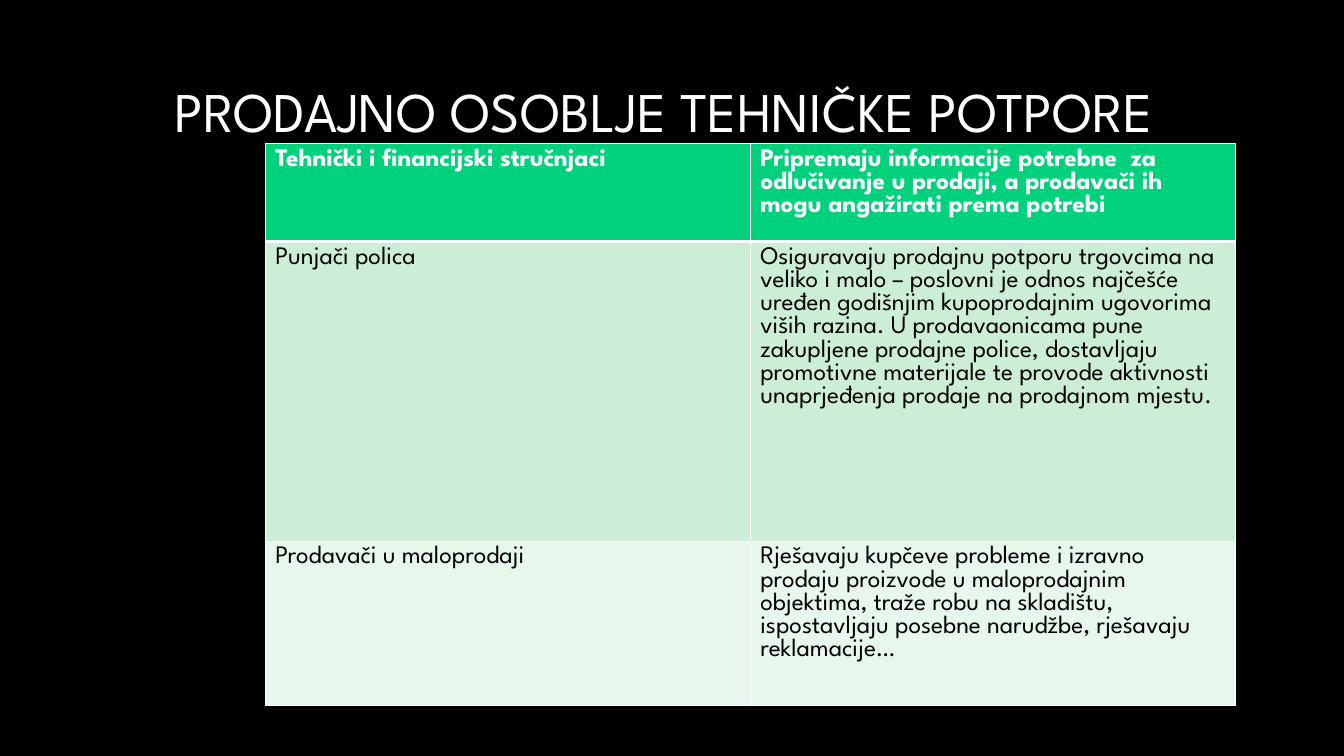
from pptx import Presentation
from pptx.dml.color import RGBColor
from pptx.enum.text import MSO_ANCHOR, PP_ALIGN
from pptx.oxml.ns import qn
from pptx.util import Pt
from lxml import etree

CENTER = PP_ALIGN.CENTER
LEFT = PP_ALIGN.LEFT
MIDDLE = MSO_ANCHOR.MIDDLE
TOP = MSO_ANCHOR.TOP

FONT = "League Spartan"
COLORS = {
    "background": "000000",
    "white": "FFFFFF",
    "text": "000000",
    "header": "01D17D",
    "band_dark": "CCEED7",
    "band_light": "E7F7EC",
}

# Each row: height, fill, cell texts
STAFF_ROWS = [
    (70, "header", (
        "Tehnički i financijski stručnjaci",
        "Pripremaju informacije potrebne  za odlučivanje u prodaji, "
        "a prodavači ih mogu angažirati prema potrebi")),
    (214, "band_dark", (
        "Punjači polica",
        "Osiguravaju prodajnu potporu trgovcima na veliko i malo – poslovni je "
        "odnos najčešće uređen godišnjim kupoprodajnim ugovorima viših razina. "
        "U prodavaonicama pune zakupljene prodajne police, dostavljaju "
        "promotivne materijale te provode aktivnosti unaprjeđenja prodaje na "
        "prodajnom mjestu.")),
    (117.5, "band_light", (
        "Prodavači u maloprodaji",
        "Rješavaju kupčeve probleme i izravno prodaju proizvode u "
        "maloprodajnim objektima, traže robu na skladištu, ispostavljaju "
        "posebne narudžbe, rješavaju reklamacije…")),
]
COLUMN_WIDTH = 346.5


def rgb(name):
    return RGBColor.from_string(COLORS[name])


def write_text(tf, text, size=18, color="text", bold=False, align=LEFT, spacing=None):
    tf.word_wrap = True
    p = tf.paragraphs[0]
    p.alignment = align
    p.line_spacing = spacing
    r = p.add_run()
    r.text = text
    r.font.name = FONT
    r.font.size = Pt(size)
    r.font.bold = bold
    r.font.color.rgb = rgb(color)


def set_borders(cell, **widths):
    """Draw white borders; widths are in points, keyed by side L, R, T, B."""
    props = cell._tc.get_or_add_tcPr()
    for i, (side, width) in enumerate(widths.items()):
        line = etree.Element(qn(f"a:ln{side}"), w=str(Pt(width)))
        fill = etree.SubElement(line, qn("a:solidFill"))
        etree.SubElement(fill, qn("a:srgbClr"), val=COLORS["white"])
        props.insert(i, line)


def add_title(s, text):
    sp = s.shapes.title
    sp.left, sp.top, sp.width, sp.height = Pt(28.8), Pt(27.4), Pt(890.6), Pt(108.7)
    sp.text_frame.vertical_anchor = MIDDLE
    write_text(sp.text_frame, text, size=40, color="white", align=CENTER, spacing=0.9)


def add_staff_table(s, left, top):
    height = sum(row[0] for row in STAFF_ROWS)
    table = s.shapes.add_table(len(STAFF_ROWS), 2, Pt(left), Pt(top),
                               Pt(2 * COLUMN_WIDTH), Pt(height)).table
    for column in table.columns:
        column.width = Pt(COLUMN_WIDTH)
    for i, (row_height, fill, texts) in enumerate(STAFF_ROWS):
        table.rows[i].height = Pt(row_height)
        is_header = i == 0
        for j, text in enumerate(texts):
            cell = table.cell(i, j)
            cell.vertical_anchor = TOP
            cell.fill.solid()
            cell.fill.fore_color.rgb = rgb(fill)
            write_text(cell.text_frame, text, bold=is_header,
                       color="white" if is_header else "text")
            set_borders(cell, L=1, R=1, T=3 if i == 1 else 1, B=3 if is_header else 1)


def main():
    prs = Presentation()
    prs.slide_width, prs.slide_height = Pt(960), Pt(540)

    # Title-only slide on a black background
    s = prs.slides.add_slide(prs.slide_layouts[5])
    s.background.fill.solid()
    s.background.fill.fore_color.rgb = rgb("background")

    # Title and table of support staff
    add_title(s, "PRODAJNO OSOBLJE TEHNIČKE POTPORE")
    add_staff_table(s, left=189.4, top=102.6)

    prs.save("out.pptx")


if __name__ == "__main__":
    main()
